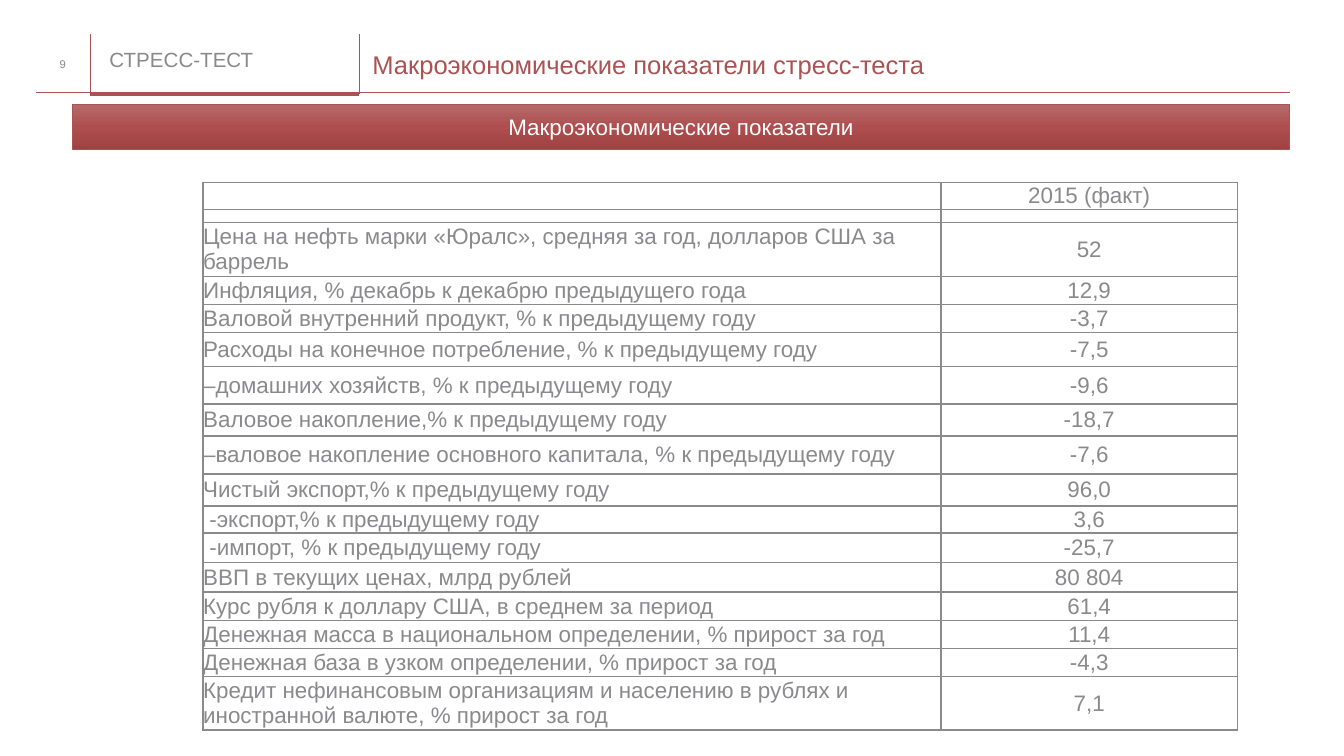
from copy import deepcopy

from lxml.etree import SubElement
from pptx import Presentation
from pptx.dml.color import RGBColor
from pptx.enum.shapes import MSO_CONNECTOR, MSO_SHAPE
from pptx.enum.text import MSO_ANCHOR, PP_ALIGN
from pptx.oxml.ns import qn
from pptx.util import Cm, Pt

RED = RGBColor(0xAB, 0x52, 0x53)
GRAY = RGBColor(0x8A, 0x8A, 0x8D)
WHITE = RGBColor(0xFF, 0xFF, 0xFF)
BAND_STOPS = [
    (0, RGBColor(0xB5, 0x6A, 0x6A)),
    (0.5, RGBColor(0xAF, 0x4E, 0x4F)),
    (1, RGBColor(0xA0, 0x41, 0x42)),
]
FONT = "Arial"

COLUMN_WIDTHS = [13.94, 5.61]
# Row height in cm, indicator, value
INDICATORS = [
    (0.43, "", "2015 (факт)"),
    (0.25, "", ""),
    (0.79, "Цена на нефть марки «Юралс», средняя за год, долларов США за баррель", "52"),
    (0.53, "Инфляция, % декабрь к декабрю предыдущего года", "12,9"),
    (0.53, "Валовой внутренний продукт, % к предыдущему году", "-3,7"),
    (0.64, "Расходы на конечное потребление, % к предыдущему году", "-7,5"),
    (0.71, "–домашних хозяйств, % к предыдущему году", "-9,6"),
    (0.61, "Валовое накопление,% к предыдущему году", "-18,7"),
    (0.71, "–валовое накопление основного капитала, % к предыдущему году", "-7,6"),
    (0.61, "Чистый экспорт,% к предыдущему году", "96,0"),
    (0.43, " -экспорт,% к предыдущему году", "3,6"),
    (0.56, " -импорт, % к предыдущему году", "-25,7"),
    (0.56, "ВВП в текущих ценах, млрд рублей", "80 804"),
    (0.53, "Курс рубля к доллару США, в среднем за период", "61,4"),
    (0.53, "Денежная масса в национальном определении, % прирост за год", "11,4"),
    (0.53, "Денежная база в узком определении, % прирост за год", "-4,3"),
    (0.79, "Кредит нефинансовым организациям и населению в рублях и "
           "иностранной валюте, % прирост за год", "7,1"),
]


def write(frame, text, size, color, align=PP_ALIGN.LEFT):
    """Fill a text frame with one formatted paragraph and return it."""
    frame.text = text
    paragraph = frame.paragraphs[0]
    paragraph.alignment = align
    for run in paragraph.runs:
        run.font.name = FONT
        run.font.size = Pt(size)
        run.font.color.rgb = color
    return paragraph


def clear_insets(holder):
    holder.margin_left = holder.margin_right = 0
    holder.margin_top = holder.margin_bottom = 0


def add_label(slide, box, text, size, color, align=PP_ALIGN.LEFT):
    label = slide.shapes.add_textbox(*map(Cm, box))
    frame = label.text_frame
    frame.word_wrap = True
    frame.vertical_anchor = MSO_ANCHOR.MIDDLE
    clear_insets(frame)
    return write(frame, text, size, color, align)


def add_rectangle(slide, box):
    rectangle = slide.shapes.add_shape(MSO_SHAPE.RECTANGLE, *map(Cm, box))
    rectangle.shadow.inherit = False
    rectangle.text_frame.word_wrap = True
    rectangle.text_frame.vertical_anchor = MSO_ANCHOR.MIDDLE
    return rectangle


def add_rule(slide, start, end, width=0.25):
    rule = slide.shapes.add_connector(MSO_CONNECTOR.STRAIGHT, *map(Cm, start + end))
    rule.line.color.rgb = RED
    rule.line.width = Pt(width)
    SubElement(rule._element.spPr, qn("a:effectLst"))


def add_header(slide, box, number, section, title):
    left, top, width, height = box
    right, bottom = left + width, top + height
    tab_left, tab_right = left + 1.01, left + 6.09
    rule_y = bottom - 0.03

    add_rule(slide, (tab_left, rule_y), (left, rule_y))
    add_rule(slide, (tab_right, bottom), (tab_left, bottom), 2.25)
    add_rule(slide, (right, rule_y), (tab_right, rule_y))
    for x in (tab_left, tab_right):
        add_rule(slide, (x, bottom), (x, top))

    tab = add_rectangle(slide, (tab_left + 0.05, top - 0.03, 5, 1.09))
    tab.fill.solid()
    tab.fill.fore_color.rgb = WHITE
    tab.line.fill.background()
    clear_insets(tab.text_frame)
    tab.text_frame.margin_left = Cm(0.32)
    section_line = write(tab.text_frame, section, 11, GRAY)
    section_line.line_spacing = 0.9
    section_line.space_before = Pt(7.5)

    heading = add_label(slide, (tab_right + 0.26, top + 0.2, 22.63, 0.84), title, 13.7, RED)
    heading.line_spacing = 0.9
    add_label(slide, (left, top + 0.2, 0.99, 0.76), number, 6, GRAY, PP_ALIGN.CENTER)


def add_band(slide, box, text):
    band = add_rectangle(slide, box)
    band.fill.gradient()
    first_stop = band.fill.gradient_stops[0]._gs
    first_stop.addnext(deepcopy(first_stop))
    for stop, (position, color) in zip(band.fill.gradient_stops, BAND_STOPS):
        stop.position = position
        stop.color.rgb = color
    band.fill.gradient_angle = 270
    band.line.color.rgb = RED
    band.line.width = Pt(0.5)
    write(band.text_frame, text, 12, WHITE, PP_ALIGN.CENTER)


def add_borders(cell):
    properties = cell._tc.get_or_add_tcPr()
    for side in ("a:lnL", "a:lnR", "a:lnT", "a:lnB"):
        border = SubElement(properties, qn(side), w=str(Pt(1)))
        fill = SubElement(border, qn("a:solidFill"))
        SubElement(fill, qn("a:srgbClr"), val=str(GRAY))


def add_indicator_table(slide, box):
    frame = slide.shapes.add_table(len(INDICATORS), len(COLUMN_WIDTHS), *map(Cm, box))
    table = frame.table
    table.first_row = table.horz_banding = False
    for column, width in zip(table.columns, COLUMN_WIDTHS):
        column.width = Cm(width)
    for row, (height, *texts) in zip(table.rows, INDICATORS):
        row.height = Cm(height)
        for cell, text, align in zip(row.cells, texts, (PP_ALIGN.LEFT, PP_ALIGN.CENTER)):
            clear_insets(cell)
            cell.vertical_anchor = MSO_ANCHOR.MIDDLE
            add_borders(cell)
            cell.fill.background()
            paragraph = write(cell.text_frame, text, 12, GRAY, align)
            if not text:  # keeps an empty cell from stretching its row
                SubElement(paragraph._p, qn("a:endParaRPr"), sz="500")


def main():
    deck = Presentation()
    deck.slide_width, deck.slide_height = Cm(25.4), Cm(14.29)
    slide = deck.slides.add_slide(deck.slide_layouts[6])
    add_header(slide, (0.69, 0.64, 23.69, 1.14), "9", "СТРЕСС-ТЕСТ",
               "Макроэкономические показатели стресс-теста")
    add_band(slide, (1.37, 1.98, 23.01, 0.84), "Макроэкономические показатели")
    add_indicator_table(slide, (3.84, 3.45, sum(COLUMN_WIDTHS),
                                sum(height for height, *_ in INDICATORS)))
    deck.save("out.pptx")


if __name__ == "__main__":
    main()
